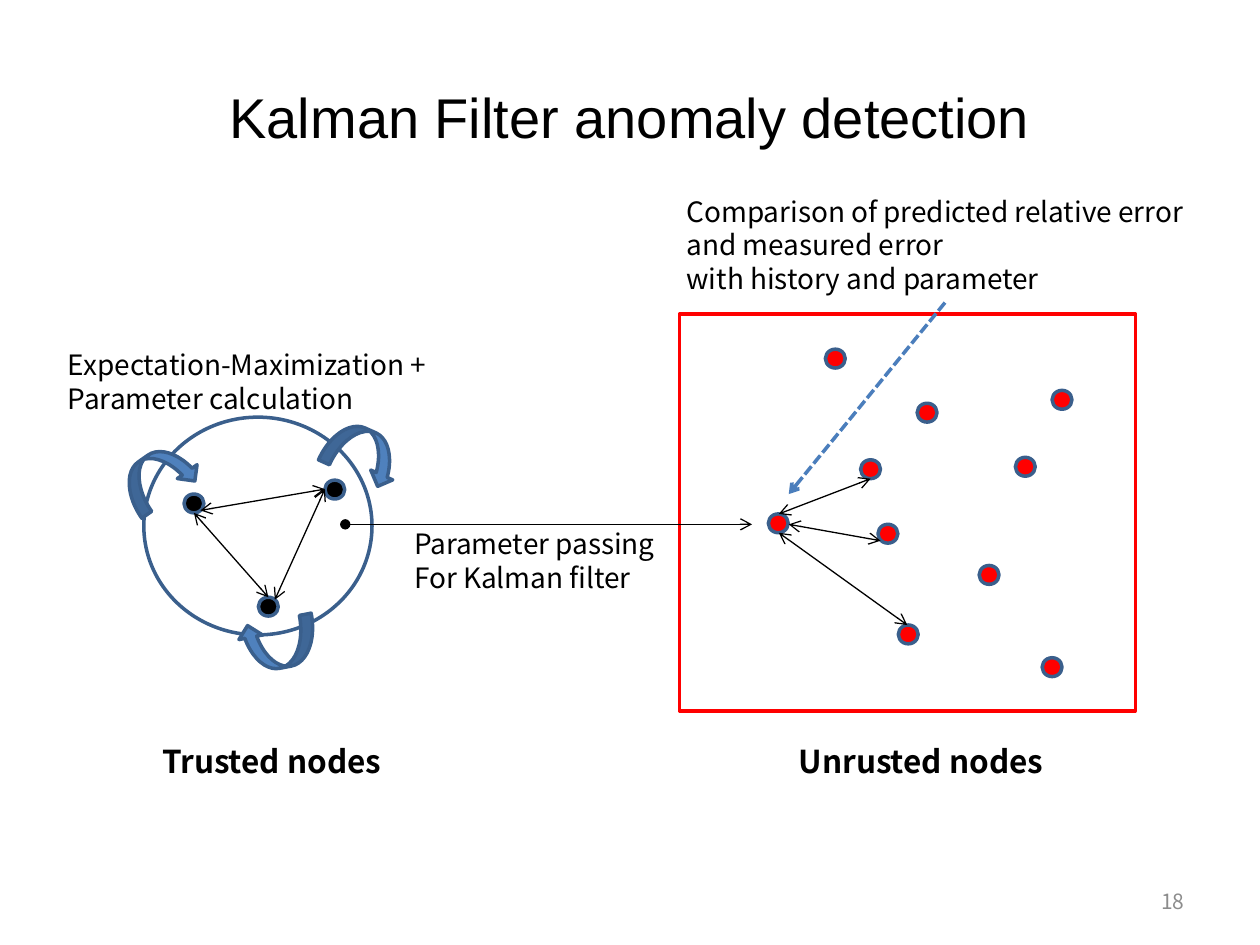
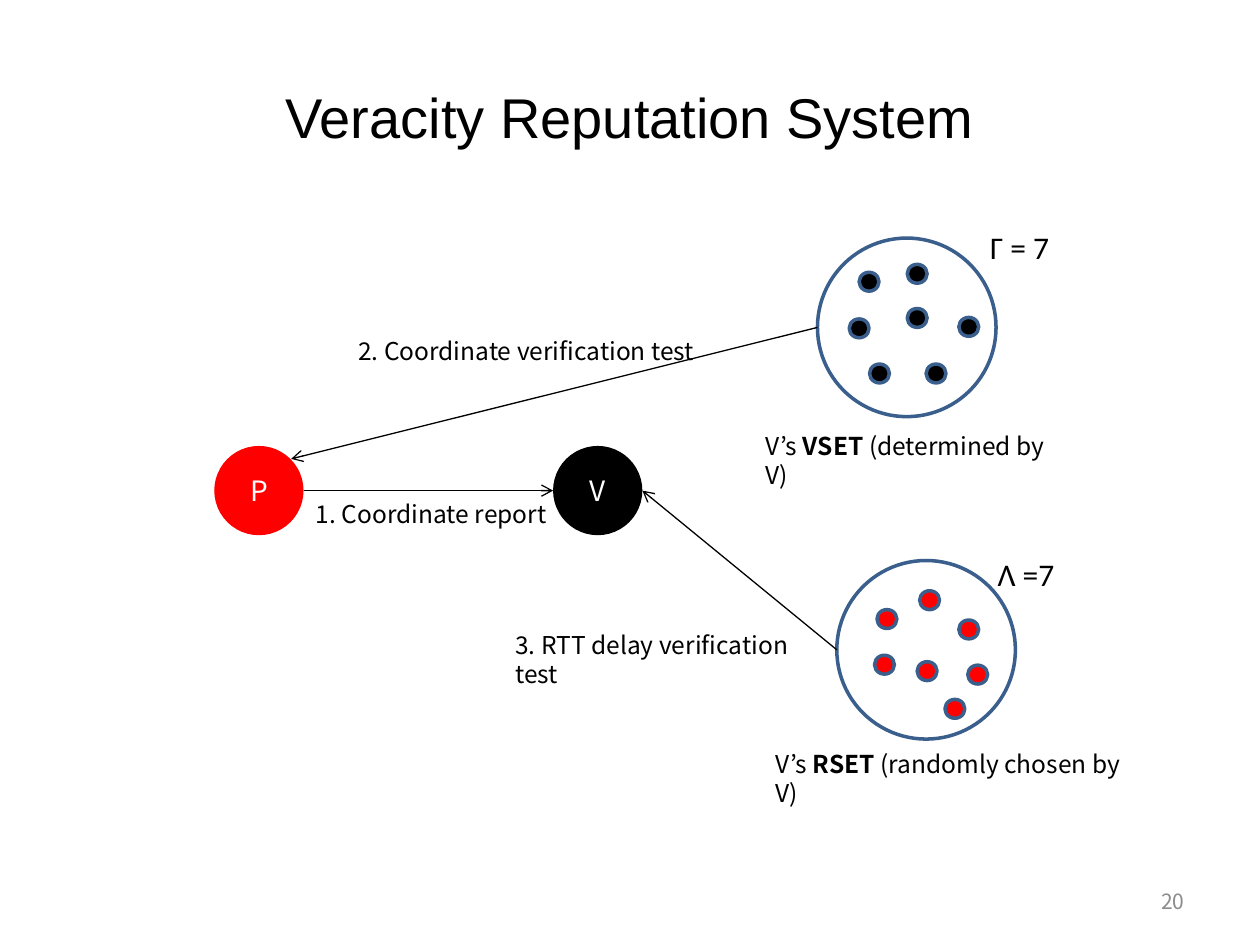
import lxml.etree
import pptx
import pptx.dml.color
import pptx.enum.dml
import pptx.enum.shapes
import pptx.enum.text
import pptx.oxml.ns
import pptx.util

Cm = pptx.util.Cm
Pt = pptx.util.Pt
RGBColor = pptx.dml.color.RGBColor
Shape = pptx.enum.shapes.MSO_SHAPE
Align = pptx.enum.text.PP_ALIGN
Anchor = pptx.enum.text.MSO_ANCHOR
qn = pptx.oxml.ns.qn

BLACK = RGBColor(0x00, 0x00, 0x00)
WHITE = RGBColor(0xFF, 0xFF, 0xFF)
RED = RGBColor(0xFF, 0x00, 0x00)
GREY = RGBColor(0x8C, 0x8C, 0x8C)
BLUE = RGBColor(0x4F, 0x81, 0xBD)
DARK_BLUE = RGBColor(0x3A, 0x5F, 0x8C)
DASH_BLUE = RGBColor(0x4B, 0x7E, 0xBC)
BODY_FONT = "Noto Sans CJK KR"
NODE_SIZE = (0.4, 0.38)


def write(frame, text, size, colour=BLACK, font=BODY_FONT, align=Align.LEFT,
          anchor=Anchor.TOP, wrap=True):
    """Fill a text frame, one paragraph a line; words between asterisks are bold."""
    frame.word_wrap = wrap
    frame.vertical_anchor = anchor
    frame.text = text.replace("*", "")
    for paragraph, line in zip(frame.paragraphs, text.split("\n")):
        paragraph.alignment = align
        parts = line.split("*")
        paragraph.text = parts[0]
        for part in parts[1:]:
            paragraph.add_run().text = part
        for run in paragraph.runs:
            run.font.name = font
            run.font.size = Pt(size)
            run.font.color.rgb = colour
            run.font.bold = parts.index(run.text) % 2 == 1


def add_figure(slide, kind, box, fill=None, outline=DARK_BLUE):
    figure = slide.shapes.add_shape(kind, *map(Cm, box))
    figure.shadow.inherit = False
    if fill is None:
        figure.fill.background()
    else:
        figure.fill.solid()
        figure.fill.fore_color.rgb = fill
    if outline is None:
        figure.line.fill.background()
    else:
        figure.line.color.rgb = outline
        figure.line.width = Pt(2)
    return figure


presentation = pptx.Presentation()
presentation.slide_width = Cm(25.4)
presentation.slide_height = Cm(19.05)

# Titles and slide numbers
slides = []
for title, number in (("Kalman Filter anomaly detection", "18"),
                      ("Veracity Reputation System", "20")):
    slide = presentation.slides.add_slide(presentation.slide_layouts[6])
    heading = slide.shapes.add_textbox(Cm(1.27), Cm(0.76), Cm(22.86), Cm(3.18))
    write(heading.text_frame, title, 32, font="Arial", align=Align.CENTER,
          anchor=Anchor.MIDDLE)
    footer = slide.shapes.add_textbox(Cm(18.21), Cm(17.65), Cm(5.92), Cm(1.02))
    write(footer.text_frame, number, 12, GREY, align=Align.RIGHT, anchor=Anchor.MIDDLE)
    slides.append(slide)
kalman, veracity = slides

# Areas that hold the nodes
add_figure(kalman, Shape.RECTANGLE, (13.7, 6.33, 9.19, 8), outline=RED)
add_figure(kalman, Shape.OVAL, (2.9, 8.41, 4.6, 4.39))
add_figure(veracity, Shape.OVAL, (16.48, 4.8, 3.6, 3.6))
add_figure(veracity, Shape.OVAL, (16.87, 11.3, 3.6, 3.6))

# Nodes: slide, colour, top left corners
trusted = [(3.71, 9.96), (5.21, 12.04), (6.55, 9.68)]
untrusted = [(17.35, 9.27), (15.49, 10.36), (21.01, 13.26), (18.11, 12.6), (21.21, 7.87),
             (18.49, 8.13), (20.47, 9.22), (17.7, 10.57), (19.74, 11.4), (16.64, 7.04)]
vset = [(17.12, 6.43), (18.67, 7.34), (18.29, 5.33), (17.53, 7.34), (17.32, 5.49),
        (19.33, 6.4), (18.29, 6.22)]
rset = [(17.68, 12.29), (19.51, 13.41), (17.63, 13.21), (18.54, 11.91), (18.49, 13.34),
        (19.33, 12.5), (19.05, 14.1)]
for slide, colour, corners in ((kalman, BLACK, trusted), (kalman, RED, untrusted),
                               (veracity, BLACK, vset), (veracity, RED, rset)):
    for corner in corners:
        add_figure(slide, Shape.OVAL, corner + NODE_SIZE, colour)

# Update loops at the trusted nodes
for left, top, angle in ((6.55, 8.66, 24.1), (2.44, 9.12, 324.9), (4.83, 12.5, 168.9)):
    update = add_figure(kalman, Shape.CURVED_DOWN_ARROW, (left, top, 1.55, 0.97), BLUE)
    update.rotation = angle

# Peers P and V
for letter, left, colour in (("P", 4.32, RED), ("V", 11.15, BLACK)):
    peer = add_figure(veracity, Shape.OVAL, (left, 8.99, 1.8, 1.8), colour, None)
    write(peer.text_frame, letter, 16, WHITE, align=Align.CENTER, anchor=Anchor.MIDDLE)

# Lines: slide, start, end, mark at the start
links = [
    (kalman, (3.91, 10.34), (5.41, 12.04), "arrow"),
    (kalman, (6.55, 9.86), (5.54, 12.09), "arrow"),
    (kalman, (6.55, 9.86), (4.04, 10.29), "arrow"),
    (kalman, (6.96, 10.57), (15.16, 10.57), "oval"),
    (kalman, (17.75, 10.9), (15.9, 10.57), "arrow"),
    (kalman, (17.55, 9.65), (15.7, 10.36), "arrow"),
    (kalman, (18.29, 12.6), (15.7, 10.74), "arrow"),
    (kalman, (19.05, 6.1), (15.9, 9.96), "dashed"),
    (veracity, (6.12, 9.89), (11.15, 9.89), None),
    (veracity, (16.48, 6.6), (5.87, 9.25), None),
    (veracity, (16.87, 13.1), (12.95, 9.89), None),
]
for slide, start, end, mark in links:
    link = slide.shapes.add_connector(pptx.enum.shapes.MSO_CONNECTOR.STRAIGHT,
                                      *map(Cm, start + end))
    link.line.color.rgb = BLACK
    link.line.width = Pt(0.75)
    if mark == "dashed":
        link.line.color.rgb = DASH_BLUE
        link.line.width = Pt(2)
        link.line.dash_style = pptx.enum.dml.MSO_LINE.SQUARE_DOT
    properties = link._element.spPr
    outline = properties.find(qn("a:ln"))
    if mark in ("arrow", "oval"):
        lxml.etree.SubElement(outline, qn("a:headEnd"), type=mark)
    lxml.etree.SubElement(outline, qn("a:tailEnd"), type="arrow")
    lxml.etree.SubElement(properties, qn("a:effectLst"))

# Labels: slide, box, size, text
labels = [
    (kalman, (1.12, 6.89, 8.18, 1.63), 16, "Expectation-Maximization + Parameter calculation"),
    (kalman, (8.1, 10.49, 5.54, 1.63), 16, "Parameter passing\nFor Kalman filter"),
    (kalman, (13.59, 3.79, 10.92, 2.31), 16,
     "Comparison of predicted relative error\nand measured error\nwith history and parameter"),
    (kalman, (3.02, 14.83, 5.03, 1.02), 18, "*Trusted nodes*"),
    (kalman, (15.85, 14.83, 5.72, 1.02), 18, "*Unrusted nodes*"),
    (veracity, (6.12, 9.93, 5.18, 0.86), 14, "1. Coordinate report"),
    (veracity, (6.97, 6.65, 7.87, 0.86), 14, "2. Coordinate verification test"),
    (veracity, (10.14, 12.57, 6.7, 0.86), 14, "3. RTT delay verification test"),
    (veracity, (15.19, 8.56, 6.6, 0.86), 14, "V’s *VSET* (determined by V)"),
    (veracity, (15.39, 14.97, 7.92, 0.86), 14, "V’s *RSET* (randomly chosen by V)"),
]
for slide, box, size, text in labels:
    label = slide.shapes.add_textbox(*map(Cm, box))
    write(label.text_frame, text, size)

# Set sizes
for text, left, top in (("Γ = 7", 19.71, 4.47), ("Λ =7", 19.86, 11.07)):
    set_size = veracity.shapes.add_textbox(Cm(left), Cm(top), Cm(1.7), Cm(1.02))
    write(set_size.text_frame, text, 18, font="Calibri", wrap=False)

presentation.save("out.pptx")
